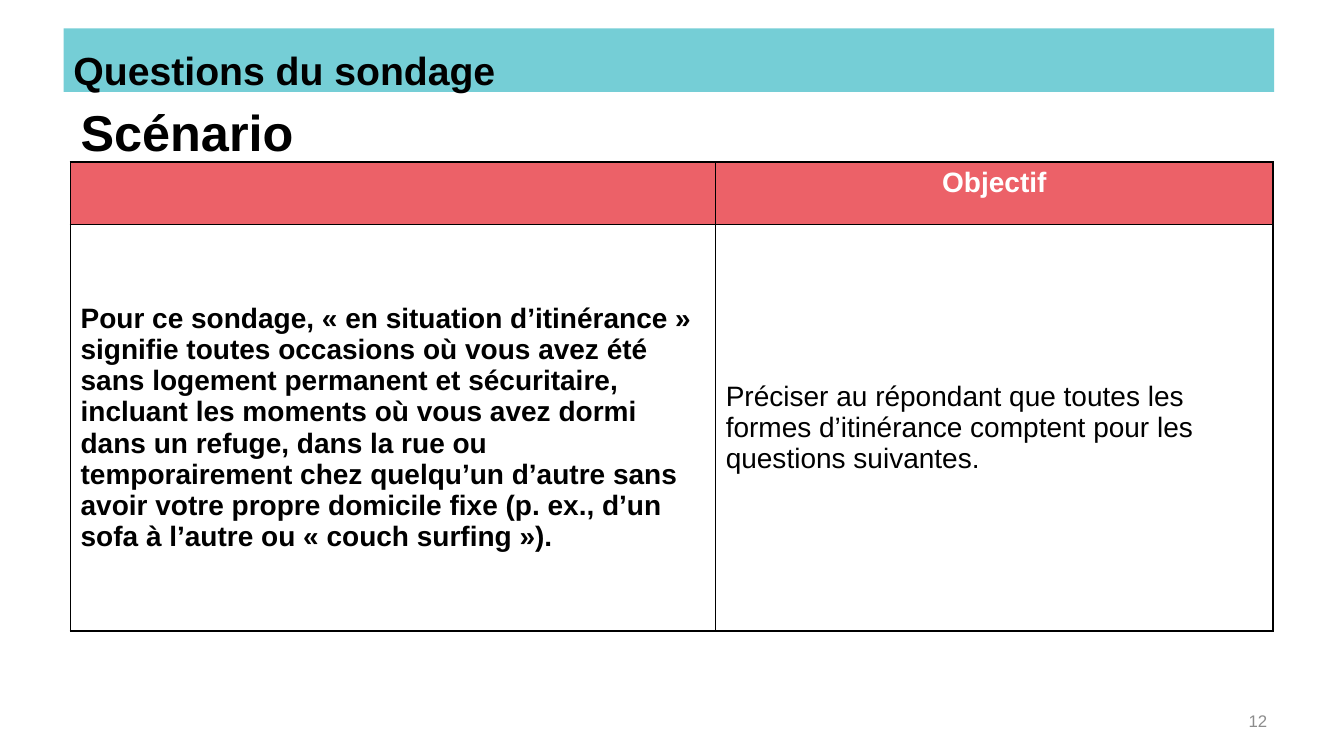
from lxml import etree
from pptx import Presentation, util as u
from pptx.dml.color import RGBColor
from pptx.enum import shapes, text
from pptx.oxml import ns

TEAL, CORAL, BLACK, WHITE, GREY = "75CED6", "EC6168", "000000", "FFFFFF", "8C8C8C"
LEFT, CENTER, RIGHT = text.PP_ALIGN.LEFT, text.PP_ALIGN.CENTER, text.PP_ALIGN.RIGHT
TOP, MIDDLE = text.MSO_ANCHOR.TOP, text.MSO_ANCHOR.MIDDLE

DEFINITION = (
    "Pour ce sondage, « en situation d’itinérance » signifie toutes occasions où vous avez été "
    "sans logement permanent et sécuritaire, incluant les moments où vous avez dormi dans un "
    "refuge, dans la rue ou temporairement chez quelqu’un d’autre sans avoir votre propre "
    "domicile fixe (p. ex., d’un sofa à l’autre ou « couch surfing »)."
)
OBJECTIVE = ("Préciser au répondant que toutes les formes d’itinérance comptent "
             "pour les questions suivantes.")


def color(hex_value):
    return RGBColor.from_string(hex_value)


class SlideBuilder:
    """Holds the font and the current slide."""

    def __init__(self, slide, font_name="Arial"):
        self.slide = slide
        self.font_name = font_name

    def set_text(self, frame, words, size, hex_value=BLACK, bold=False, align=LEFT):
        frame.word_wrap = True
        paragraph = frame.paragraphs[0]
        paragraph.text = words
        paragraph.alignment = align
        font = paragraph.font
        font.name, font.size, font.bold = self.font_name, u.Pt(size), bold
        font.color.rgb = color(hex_value)
        return paragraph

    def title(self, words, left, top, width, height, size):
        shape = self.slide.shapes.title
        shape.left, shape.top = u.Pt(left), u.Pt(top)
        shape.width, shape.height = u.Pt(width), u.Pt(height)
        frame = shape.text_frame
        frame.auto_size = text.MSO_AUTO_SIZE.NONE
        frame.vertical_anchor = MIDDLE
        self.set_text(frame, words, size, bold=True)

    def band(self, words, left, top, width, height, size, line_height):
        shape = self.slide.shapes.add_shape(
            shapes.MSO_SHAPE.RECTANGLE, u.Pt(left), u.Pt(top), u.Pt(width), u.Pt(height))
        shape.shadow.inherit = False
        shape.fill.solid()
        shape.fill.fore_color.rgb = color(TEAL)
        shape.line.fill.background()
        shape.text_frame.vertical_anchor = TOP
        paragraph = self.set_text(shape.text_frame, words, size, bold=True)
        paragraph.line_spacing = u.Pt(line_height)

    def text_box(self, words, left, top, width, height, size, hex_value, align):
        box = self.slide.shapes.add_textbox(
            u.Pt(left), u.Pt(top), u.Pt(width), u.Pt(height))
        box.text_frame.vertical_anchor = MIDDLE
        self.set_text(box.text_frame, words, size, hex_value, align=align)

    def table(self, left, top, widths, heights):
        frame = self.slide.shapes.add_table(
            len(heights), len(widths), u.Pt(left), u.Pt(top),
            u.Pt(sum(widths)), u.Pt(sum(heights)))
        table = frame.table
        table.first_row = table.horz_banding = False
        for column, width in zip(table.columns, widths):
            column.width = u.Pt(width)
        for row, height in zip(table.rows, heights):
            row.height = u.Pt(height)
        return table

    def borders(self, cell, **widths):
        properties = cell._tc.get_or_add_tcPr()
        for side, width in widths.items():
            line = etree.SubElement(properties, ns.qn(f"a:ln{side}"), w=str(u.Pt(width)))
            fill = etree.SubElement(line, ns.qn("a:solidFill"))
            etree.SubElement(fill, ns.qn("a:srgbClr"), val=BLACK)

    def cell(self, cell, words, fill=None, anchor=MIDDLE, **style):
        if fill:
            cell.fill.solid()
            cell.fill.fore_color.rgb = color(fill)
        else:
            cell.fill.background()
        cell.vertical_anchor = anchor
        if words:
            self.set_text(cell.text_frame, words, 20, **style)


def main():
    presentation = Presentation()
    presentation.slide_width, presentation.slide_height = u.Pt(960), u.Pt(540)
    slide = presentation.slides.add_slide(presentation.slide_layouts[5])
    builder = SlideBuilder(slide)

    # Headings
    builder.title("Scénario", 50.4, 66.2, 639.4, 55.4, 36)
    builder.band("Questions du sondage", 45.4, 20.2, 864.7, 45.4, 28, 43.2)

    # Table: heavy outline, thin inner rules
    table = builder.table(50.4, 115.9, [460.8, 398.2], [44.6, 290.2])
    outer, inner_vertical, inner_horizontal = 1.5, 0.5, 1
    for row in range(2):
        for column in range(2):
            builder.borders(
                table.cell(row, column),
                L=inner_vertical if column else outer,
                R=outer if column else inner_vertical,
                T=inner_horizontal if row else outer,
                B=outer if row else inner_horizontal)
    builder.cell(table.cell(0, 0), "", CORAL, TOP)
    builder.cell(table.cell(0, 1), "Objectif", CORAL, TOP,
                 hex_value=WHITE, bold=True, align=CENTER)
    builder.cell(table.cell(1, 0), DEFINITION, bold=True)
    builder.cell(table.cell(1, 1), OBJECTIVE)

    # Page number
    builder.text_box("12", 688.3, 500.4, 223.9, 28.8, 12, GREY, RIGHT)

    presentation.save("out.pptx")


if __name__ == "__main__":
    main()
